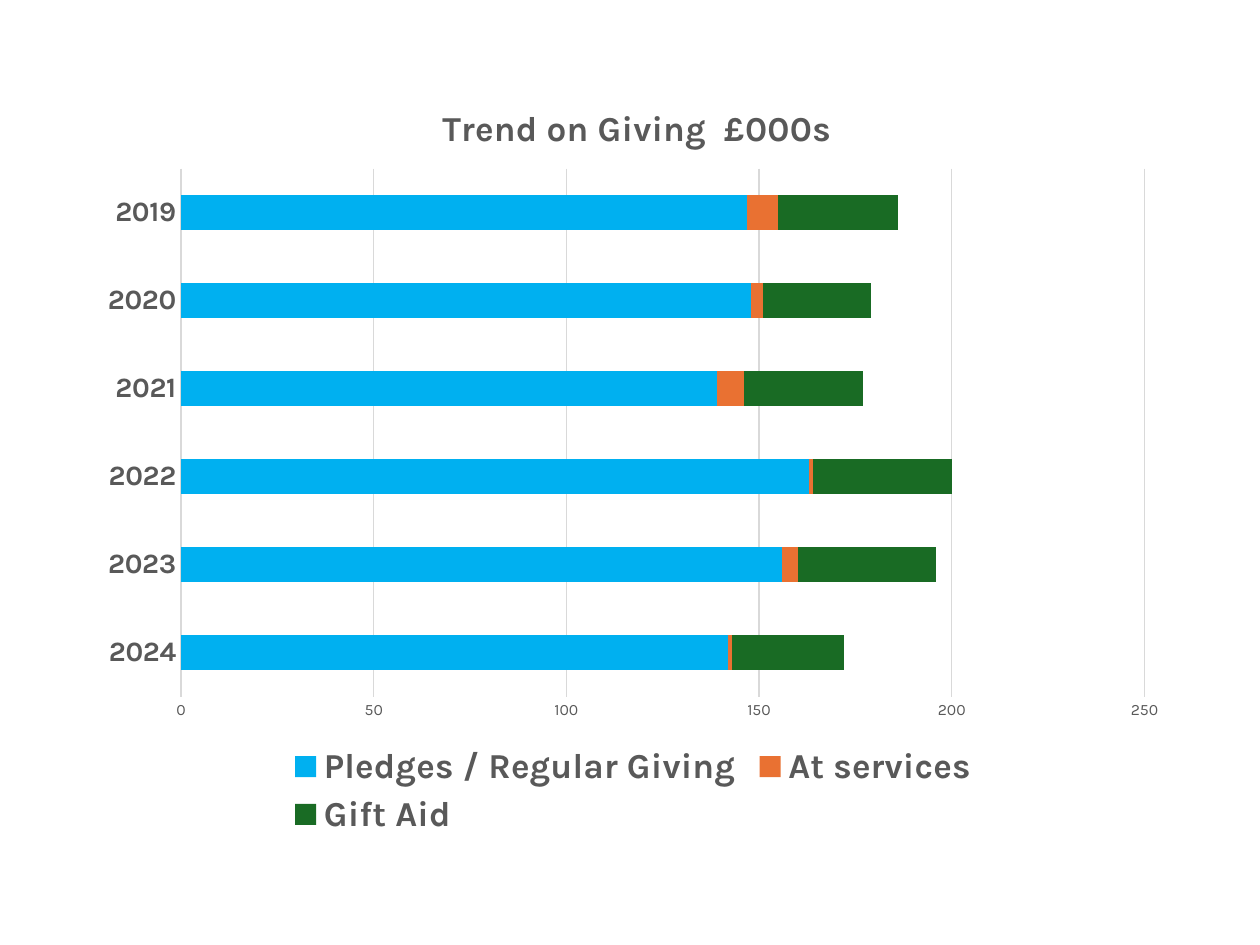
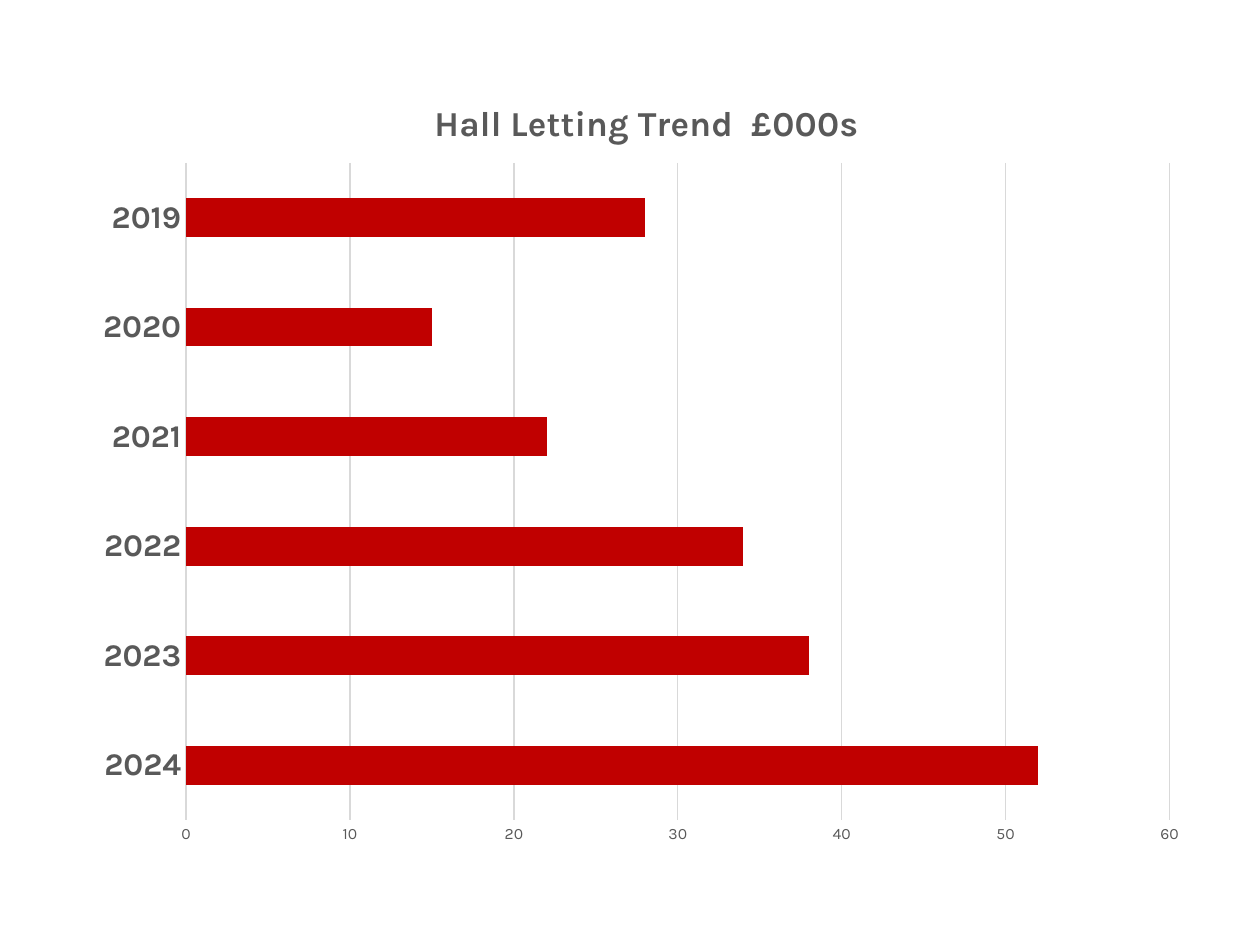
import lxml.etree
import pptx
import pptx.chart.data
import pptx.dml.color
import pptx.enum.chart
import pptx.oxml.ns
import pptx.util

Cm = pptx.util.Cm
Pt = pptx.util.Pt
BarType = pptx.enum.chart.XL_CHART_TYPE
qn = pptx.oxml.ns.qn

FONT = "Karla"
TEXT_GREY = "595959"
RULE_GREY = "D9D9D9"
YEARS = [str(year) for year in range(2024, 2018, -1)]
THOUSANDS = "#,##0,"


def colour(hex_code):
    """Return the colour for a hex string."""
    return pptx.dml.color.RGBColor.from_string(hex_code)


def style_font(font, size, bold=False):
    """Give a font the shared face and grey."""
    font.name = FONT
    font.size = Pt(size)
    font.bold = bold
    font.color.rgb = colour(TEXT_GREY)


def style_rule(line):
    """Give an axis or grid line the shared light grey."""
    line.width = Pt(0.75)
    line.color.rgb = colour(RULE_GREY)


def place(part, x, y, w=None, h=None, inner=False):
    """Set a chart part at fractions of the chart box."""
    for old_layout in part.findall(qn("c:layout")):
        part.remove(old_layout)
    layout = lxml.etree.Element(qn("c:layout"))
    manual = lxml.etree.SubElement(layout, qn("c:manualLayout"))
    settings = {"layoutTarget": "inner" if inner else None,
                "xMode": "edge", "yMode": "edge", "x": x, "y": y, "w": w, "h": h}
    for tag, value in settings.items():
        if value is not None:
            lxml.etree.SubElement(manual, qn(f"c:{tag}")).set("val", str(value))
    overlay = part.find(qn("c:overlay"))
    if overlay is None:
        part.insert(0, layout)
    else:
        overlay.addprevious(layout)


def style_axes(chart, year_size, maximum, step):
    """Format the year axis and the axis of thousands of pounds."""
    years, pounds = chart.category_axis, chart.value_axis
    for axis, size, bold in ((years, year_size, True), (pounds, 9, False)):
        axis.major_tick_mark = pptx.enum.chart.XL_TICK_MARK.NONE
        axis.minor_tick_mark = pptx.enum.chart.XL_TICK_MARK.NONE
        style_font(axis.tick_labels.font, size, bold)
    style_rule(years.format.line)
    pounds.format.line.fill.background()
    style_rule(pounds.major_gridlines.format.line)
    pounds.minimum_scale = 0
    pounds.maximum_scale = maximum
    pounds.major_unit = step
    pounds.tick_labels.number_format = THOUSANDS
    pounds.tick_labels.number_format_is_linked = False


def trend_slide(deck, box, bar_type, heading, heading_at, plot_at, series,
                gap, year_size, maximum, step):
    """Add a slide with one bar chart of yearly amounts and return the chart."""
    slide = deck.slides.add_slide(deck.slide_layouts[6])
    amounts = pptx.chart.data.CategoryChartData(number_format=THOUSANDS)
    amounts.categories = YEARS
    for name, thousands, _ in series:
        amounts.add_series(name, [value * 1000 for value in thousands])
    chart = slide.shapes.add_chart(bar_type, *map(Cm, box), amounts).chart
    chart.font.name = FONT
    chart.font.size = Pt(10)
    chart.has_legend = False
    chart.has_title = True
    title = chart.chart_title
    title.include_in_layout = False
    title.text_frame.text = heading
    style_font(title.text_frame.paragraphs[0].font, 20, True)
    place(title._element, *heading_at)
    place(chart._chartSpace.chart.plotArea, *plot_at, inner=True)

    bars = chart.plots[0]
    bars.gap_width = gap
    bars.vary_by_categories = False
    for bar, (_, _, fill) in zip(bars.series, series):
        bar.format.fill.solid()
        bar.format.fill.fore_color.rgb = colour(fill)
    style_axes(chart, year_size, maximum, step)
    return chart


def add_legend(chart, area):
    """Show the series names below the bars."""
    chart.has_legend = True
    legend = chart.legend
    legend.position = pptx.enum.chart.XL_LEGEND_POSITION.BOTTOM
    legend.include_in_layout = False
    style_font(legend.font, 20, True)
    place(legend._element, *area)


def main():
    """Build the giving and hall letting slides."""
    deck = pptx.Presentation()
    deck.slide_width, deck.slide_height = Cm(25.4), Cm(19.05)
    giving = trend_slide(
        deck, (1.73, 1.35, 22.07, 15.77), BarType.BAR_STACKED,
        "Trend on Giving  £000s", (0.32, 0.04), (0.087, 0.13, 0.88, 0.675),
        [("Pledges / Regular Giving", (142, 156, 163, 139, 148, 147), "00B0F0"),
         ("At services", (1, 4, 1, 7, 3, 8), "E97132"),
         ("Gift Aid", (29, 36, 36, 31, 28, 31), "196B24")],
        gap=150, year_size=16, maximum=250000, step=50000)
    giving.plots[0].overlap = 100
    add_legend(giving, (0.18, 0.86, 0.64, 0.13))
    trend_slide(
        deck, (1.63, 1.24, 22.58, 16.08), BarType.BAR_CLUSTERED,
        "Hall Letting Trend  £000s", (0.31, 0.04), (0.094, 0.127, 0.878, 0.824),
        [("Series 1", (52, 38, 34, 22, 15, 28), "C00000")],
        gap=182, year_size=18, maximum=60000, step=10000)
    deck.save("out.pptx")


if __name__ == "__main__":
    main()
